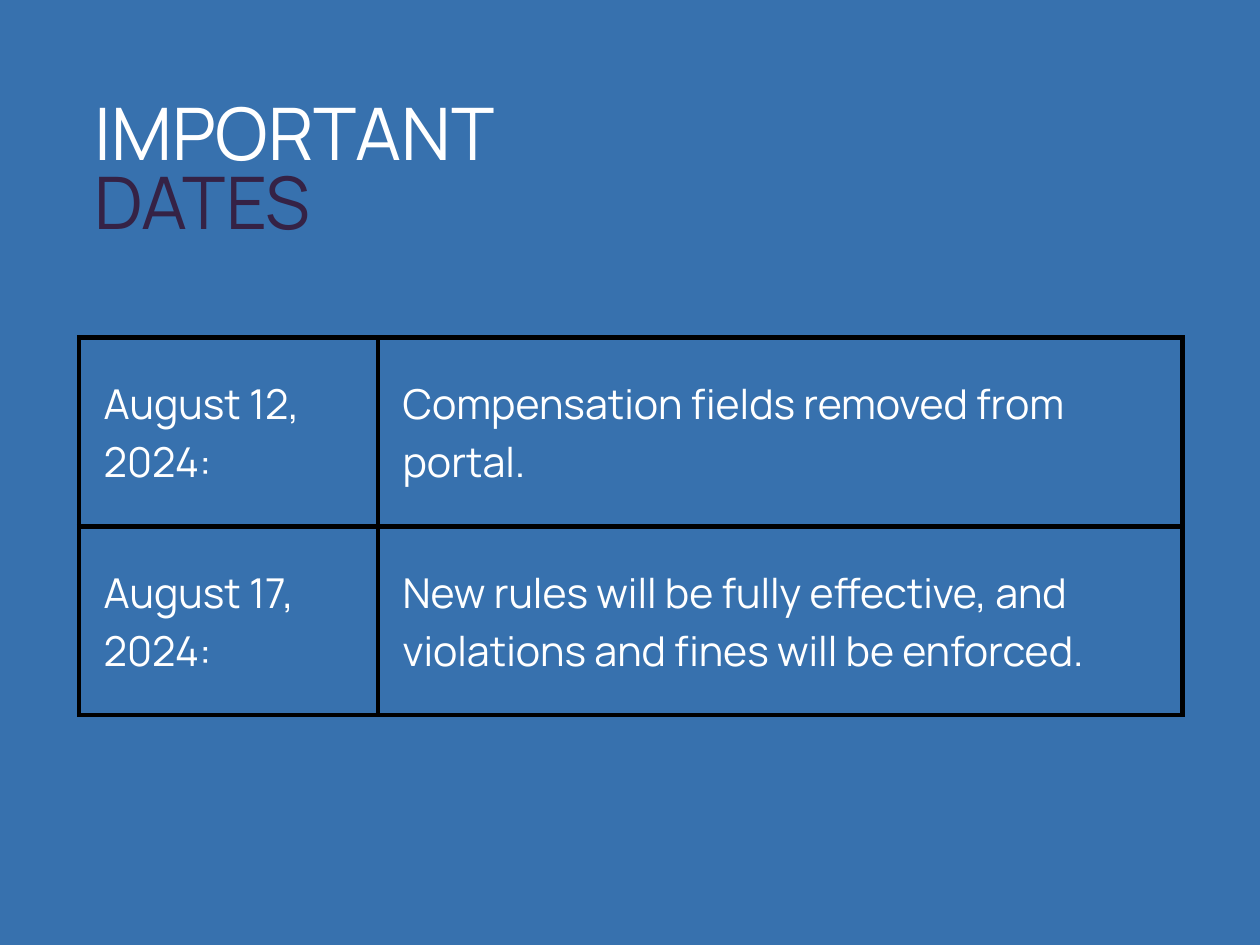
import dataclasses

import lxml.etree
import pptx
import pptx.dml.color
import pptx.enum.text
import pptx.oxml.ns
import pptx.util

Cm = pptx.util.Cm
Pt = pptx.util.Pt
RGBColor = pptx.dml.color.RGBColor

BLUE = RGBColor(0x37, 0x71, 0xAE)
WHITE = RGBColor(0xFF, 0xFF, 0xFF)
PLUM = RGBColor(0x35, 0x22, 0x45)
BLACK = RGBColor(0x00, 0x00, 0x00)
FONT = "Manrope"
COLUMN_WIDTHS = (Cm(6.43), Cm(17.3))
ROW_HEIGHT = Cm(4.06)
CELL_MARGIN = Cm(0.53)
BORDER_WIDTH = Pt(3)


@dataclasses.dataclass(frozen=True)
class TextStyle:
    size: float
    line_spacing: float
    color: RGBColor


@dataclasses.dataclass(frozen=True)
class ImportantDate:
    day: str
    event: str


TITLE_LINES = (
    ("IMPORTANT", TextStyle(44.2, 41.5, WHITE)),
    ("DATES", TextStyle(44.2, 41.5, PLUM)),
)
BODY = TextStyle(25.1, 35.2, WHITE)
DATES = (
    ImportantDate("August 12, 2024:", "Compensation fields removed from portal."),
    ImportantDate(
        "August 17, 2024:",
        "New rules will be fully effective, and violations and fines will be enforced.",
    ),
)


def write_line(para, text: str, style: TextStyle) -> None:
    para.line_spacing = Pt(style.line_spacing)
    span = para.add_run()
    span.text = text
    span.font.name = FONT
    span.font.size = Pt(style.size)
    span.font.color.rgb = style.color


def add_borders(cell) -> None:
    qn = pptx.oxml.ns.qn
    properties = cell._tc.get_or_add_tcPr()
    for position, side in enumerate(("lnL", "lnR", "lnT", "lnB")):
        line = lxml.etree.Element(qn(f"a:{side}"), w=str(BORDER_WIDTH))
        fill = lxml.etree.SubElement(line, qn("a:solidFill"))
        lxml.etree.SubElement(fill, qn("a:srgbClr"), val=str(BLACK))
        properties.insert(position, line)


def fill_cell(cell, text: str) -> None:
    cell.fill.background()
    cell.vertical_anchor = pptx.enum.text.MSO_ANCHOR.MIDDLE
    cell.margin_left = cell.margin_right = CELL_MARGIN
    cell.margin_top = cell.margin_bottom = CELL_MARGIN
    write_line(cell.text_frame.paragraphs[0], text, BODY)
    add_borders(cell)


def add_dates_table(page) -> None:
    table = page.shapes.add_table(
        len(DATES), len(COLUMN_WIDTHS), Cm(1.7), Cm(7.26),
        sum(COLUMN_WIDTHS), ROW_HEIGHT * len(DATES),
    ).table
    table.first_row = False
    table.horz_banding = False
    for column, width in zip(table.columns, COLUMN_WIDTHS):
        column.width = width
    for row, date in zip(table.rows, DATES):
        row.height = ROW_HEIGHT
        for cell, text in zip(row.cells, (date.day, date.event)):
            fill_cell(cell, text)


def add_title(page) -> None:
    box = page.shapes.add_textbox(Cm(2.03), Cm(2.31), Cm(12.98), Cm(3.02))
    frame = box.text_frame
    frame.word_wrap = True
    frame.auto_size = pptx.enum.text.MSO_AUTO_SIZE.SHAPE_TO_FIT_TEXT
    frame.margin_left = frame.margin_right = 0
    frame.margin_top = frame.margin_bottom = 0
    for index, (text, style) in enumerate(TITLE_LINES):
        para = frame.add_paragraph() if index else frame.paragraphs[0]
        write_line(para, text, style)


def main() -> None:
    deck = pptx.Presentation()
    deck.slide_width = Cm(27.1)
    deck.slide_height = Cm(20.32)
    page = deck.slides.add_slide(deck.slide_layouts[6])
    page.background.fill.solid()
    page.background.fill.fore_color.rgb = BLUE
    add_dates_table(page)
    add_title(page)
    deck.save("out.pptx")


if __name__ == "__main__":
    main()
